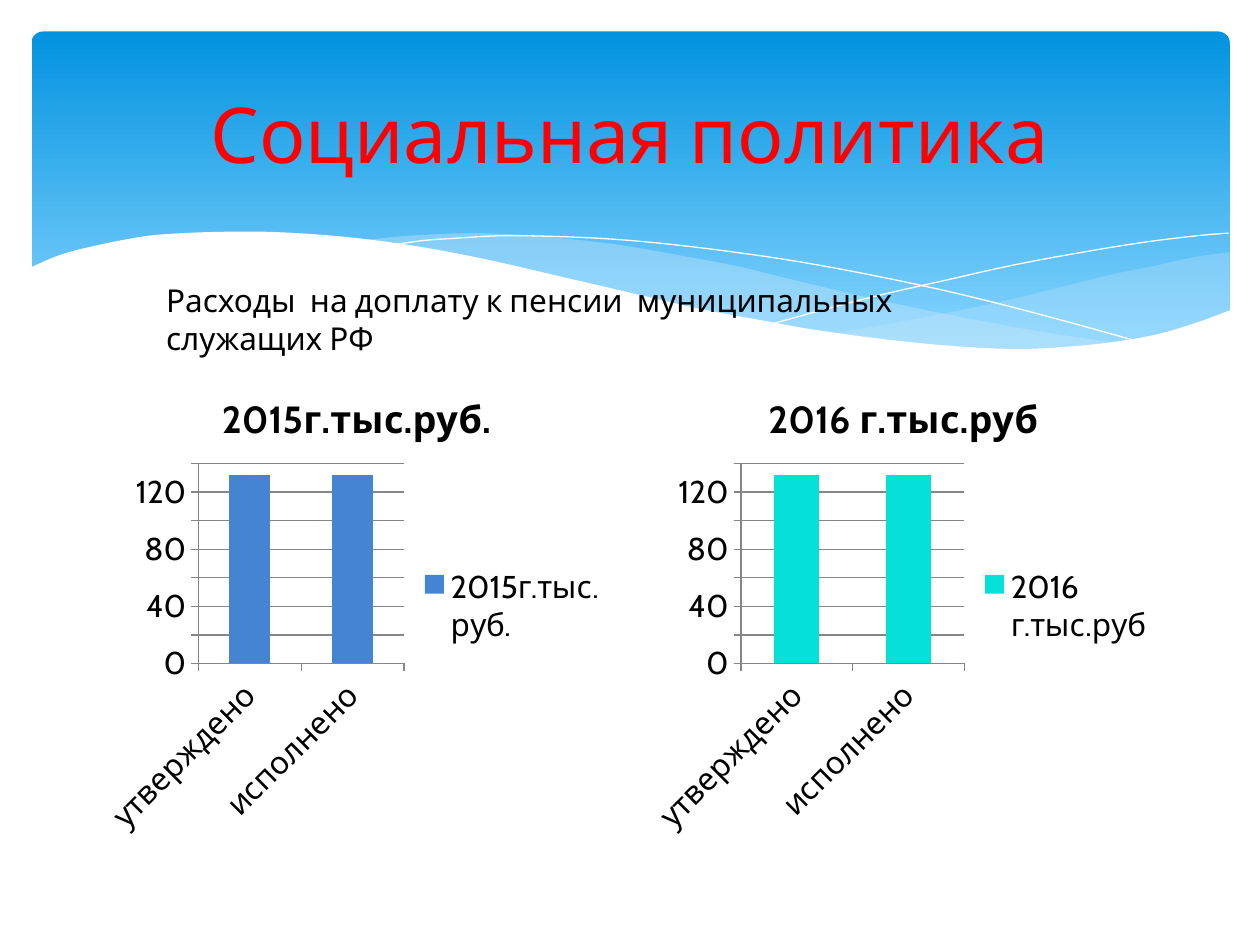
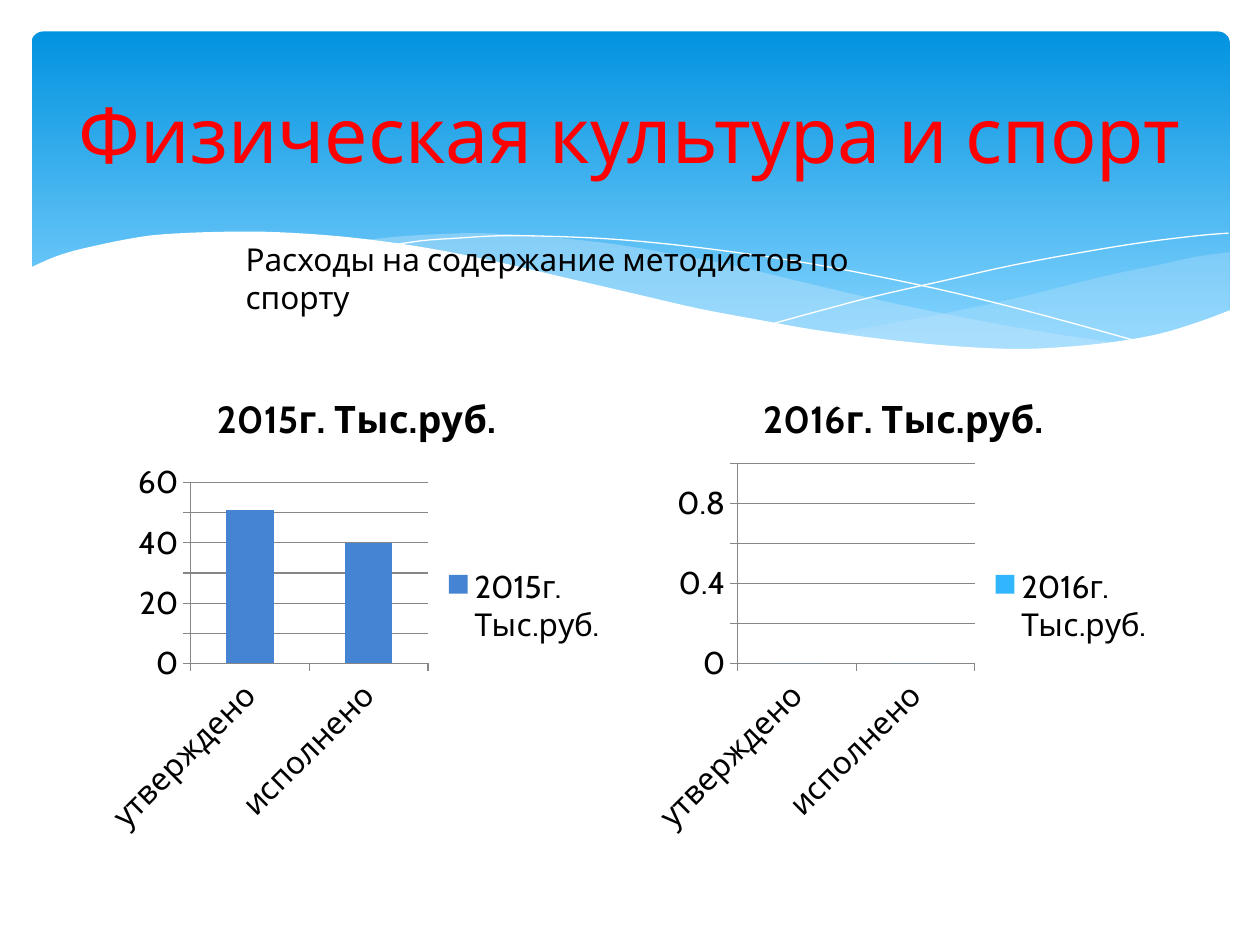
import dataclasses
import typing

import lxml.etree
import pptx
import pptx.chart.data
import pptx.dml.color
import pptx.enum.chart
import pptx.enum.shapes
import pptx.enum.text
import pptx.oxml.ns
import pptx.util

Point = tuple[float, float]


# Theme: colours, type sizes and fonts
@dataclasses.dataclass(frozen=True)
class Theme:
    font: str = "Cabin"
    title_size: float = 44
    body_size: float = 18
    chart_title_size: float = 21.6
    title: str = "FF0000"
    text: str = "000000"
    paper: str = "FFFFFF"
    band_top: str = "0293E0"
    band_bottom: str = "83D3FE"
    wave: str = "C6E7FC"
    grid_line: str = "868686"
    blue: str = "4584D3"
    cyan: str = "05E0DB"
    sky: str = "31B6FD"


THEME = Theme()

# Grid: square cells, 100 columns by 75 rows
COLUMNS, ROWS = 100, 75
SLIDE_WIDTH = pptx.util.Inches(10)
SLIDE_HEIGHT = pptx.util.Inches(7.5)


class Area(typing.NamedTuple):
    column: float
    row: float
    columns: float
    rows: float

    def lengths(self) -> list[int]:
        return [across(self.column), down(self.row), across(self.columns), down(self.rows)]


@dataclasses.dataclass(frozen=True)
class Wave:
    """Smooth stretches joined by straight sides; a fill closes the outline."""
    stretches: list[list[Point]]
    fill: str | None = None
    opacity: int = 100


@dataclasses.dataclass(frozen=True)
class BudgetChart:
    name: str
    values: tuple[int, int]
    color: str


@dataclasses.dataclass(frozen=True)
class BudgetPage:
    title: str
    caption: str
    caption_area: Area
    charts: tuple[BudgetChart, BudgetChart]


BAND_AREA = Area(2.5, 2.5, 95.1, 27)
TITLE_AREA = Area(5, 3.7, 90, 13.7)
CHART_AREA = Area(7.4, 29.3, 41.8, 37.7)
CHART_STEP = 43.4
CATEGORIES = ("утверждено", "исполнено")

WAVES = [
    # Pale wave at the right
    Wave([[(97.6, 20), (94.8, 20.4), (92.1, 21), (89.1, 21.6), (86.1, 22.3), (80.5, 23.7),
           (75.3, 24.8), (70.6, 25.7), (66.1, 26.5)],
          [(66.1, 26.5), (70.5, 27.1), (74.5, 27.5), (78.1, 27.7), (81.4, 27.8), (84.4, 27.7),
           (87.2, 27.4), (89.7, 27), (92.1, 26.5), (94.2, 25.9), (97.6, 24.7)]],
         THEME.wave, 29),
    # Pale wave across the middle
    Wave([[(89.3, 27.3), (83.7, 26.5), (77.5, 25.4), (70.6, 24), (62.9, 22.2), (58.4, 21.1),
           (54.1, 20.3), (50.2, 19.6), (46.5, 19.1), (42, 18.7), (38, 18.5), (34.4, 18.6),
           (31.3, 18.8), (28.6, 19.1)],
          [(28.6, 19.1), (32.3, 19.6), (36.2, 20.3), (40.4, 21.1), (44.9, 22.2), (49.1, 23.2),
           (53, 24), (58.4, 25.2), (63.4, 26.1), (68, 26.8), (72.2, 27.4), (76.1, 27.7),
           (79.6, 27.8), (82.8, 27.8), (85.7, 27.7), (89.3, 27.3)]],
         THEME.wave, 40),
    # Thin falling and rising lines
    Wave([[(30.9, 19.5), (33.5, 19.1), (36.3, 18.9), (40.1, 18.7), (45, 18.8), (48.9, 19),
           (53.3, 19.4), (58.2, 20), (63.6, 20.8), (69.5, 21.9), (76, 23.3), (83.1, 25.1),
           (90.7, 27.2)]]),
    Wave([[(61.3, 25.7), (65.3, 24.6), (69.5, 23.5), (74.8, 22.3), (80.6, 21), (86.6, 19.9),
           (91, 19.2), (95.1, 18.7), (97.5, 18.5)]]),
    # White sheet that cuts the band
    Wave([[(97.7, 24.6), (95, 25.6), (92, 26.5), (88.7, 27.1), (85, 27.5), (80.9, 27.7),
           (76.1, 27.5), (70.8, 27), (64.8, 26.2), (60.3, 25.4), (55.5, 24.5), (50.3, 23.3),
           (44.7, 22), (39.1, 20.7), (34, 19.7), (29.2, 19), (25, 18.6), (21.1, 18.4),
           (17.7, 18.4), (14.6, 18.5), (11.9, 18.7), (9.5, 19.1), (7.6, 19.5), (5.9, 19.9),
           (4.6, 20.3), (3.6, 20.7), (2.3, 21.3)],
          [(2.3, 32.9), (97.7, 32.9)]],
         THEME.paper),
]

PAGES = [
    BudgetPage(
        "Социальная политика",
        "Расходы  на доплату к пенсии  муниципальных служащих РФ",
        Area(12.2, 21.8, 68.5, 4),
        (BudgetChart("2015г.тыс.руб.", (132, 132), THEME.blue),
         BudgetChart("2016 г.тыс.руб", (132, 132), THEME.cyan)),
    ),
    BudgetPage(
        "Физическая культура и спорт",
        "Расходы на содержание методистов по спорту",
        Area(18.5, 18.6, 53.8, 4),
        (BudgetChart("2015г. Тыс.руб.", (51, 40), THEME.blue),
         BudgetChart("2016г. Тыс.руб.", (0, 0), THEME.sky)),
    ),
]


def across(columns: float) -> int:
    return round(SLIDE_WIDTH * columns / COLUMNS)


def down(rows: float) -> int:
    return round(SLIDE_HEIGHT * rows / ROWS)


def rgb(color: str) -> pptx.dml.color.RGBColor:
    return pptx.dml.color.RGBColor.from_string(color)


def style_font(font, size: float, color: str, bold: bool = False) -> None:
    font.name = THEME.font
    font.size = pptx.util.Pt(size)
    font.bold = bold
    font.color.rgb = rgb(color)


def smooth_curve(knots: list[Point], steps: int = 4) -> list[Point]:
    """Pass a Catmull-Rom curve through the knots."""
    if len(knots) < 3:
        return knots
    padded = [knots[0], *knots, knots[-1]]
    curve = [knots[0]]
    for before, start, end, after in zip(padded, padded[1:], padded[2:], padded[3:]):
        for step in range(1, steps + 1):
            t = step / steps
            curve.append(tuple(
                (2 * b + (c - a) * t + (2 * a - 5 * b + 4 * c - d) * t ** 2
                 + (3 * b - a - 3 * c + d) * t ** 3) / 2
                for a, b, c, d in zip(before, start, end, after)))
    return curve


def draw_band(page) -> None:
    band = page.shapes.add_shape(
        pptx.enum.shapes.MSO_SHAPE.ROUNDED_RECTANGLE, *BAND_AREA.lengths())
    band.adjustments[0] = 0.034
    band.shadow.inherit = False
    band.line.fill.background()
    band.fill.gradient()
    band.fill.gradient_angle = 270
    stops = ((0, THEME.band_top), (0.9, THEME.band_bottom))
    for stop, (position, color) in zip(band.fill.gradient_stops, stops):
        stop.position = position
        stop.color.rgb = rgb(color)


def draw_wave(page, wave: Wave) -> None:
    points = [(across(x), down(y)) for knots in wave.stretches for x, y in smooth_curve(knots)]
    builder = page.shapes.build_freeform(*points[0])
    builder.add_line_segments(points[1:], close=wave.fill is not None)
    shape = builder.convert_to_shape()
    shape.shadow.inherit = False
    if wave.fill is None:
        shape.fill.background()
        shape.line.color.rgb = rgb(THEME.paper)
        shape.line.width = pptx.util.Pt(0)
        return
    shape.line.fill.background()
    shape.fill.solid()
    shape.fill.fore_color.rgb = rgb(wave.fill)
    if wave.opacity < 100:
        color = shape.fill._xPr.find(".//" + pptx.oxml.ns.qn("a:srgbClr"))
        lxml.etree.SubElement(color, pptx.oxml.ns.qn("a:alpha"), val=str(wave.opacity * 1000))


def draw_text(page, text: str, area: Area, size: float, color: str,
              align=pptx.enum.text.PP_ALIGN.LEFT,
              anchor=pptx.enum.text.MSO_ANCHOR.TOP) -> None:
    box = page.shapes.add_textbox(*area.lengths())
    box.text_frame.word_wrap = True
    box.text_frame.vertical_anchor = anchor
    para = box.text_frame.paragraphs[0]
    para.text = text
    para.alignment = align
    style_font(para.font, size, color)


def draw_chart(page, budget: BudgetChart, area: Area) -> None:
    data = pptx.chart.data.CategoryChartData()
    data.categories = CATEGORIES
    data.add_series(budget.name, budget.values)
    chart = page.shapes.add_chart(
        pptx.enum.chart.XL_CHART_TYPE.COLUMN_STACKED, *area.lengths(), data).chart
    style_font(chart.font, THEME.body_size, THEME.text)

    # Title and legend
    chart.has_title = True
    chart.chart_title.include_in_layout = False
    para = chart.chart_title.text_frame.paragraphs[0]
    para.text = budget.name
    style_font(para.font, THEME.chart_title_size, THEME.text, bold=True)
    chart.has_legend = True
    chart.legend.position = pptx.enum.chart.XL_LEGEND_POSITION.RIGHT
    chart.legend.include_in_layout = False

    # Columns
    plot = chart.plots[0]
    plot.gap_width = 150
    plot.overlap = 100
    plot.vary_by_categories = False
    fill = plot.series[0].format.fill
    fill.solid()
    fill.fore_color.rgb = rgb(budget.color)

    # Axes and grid lines
    chart.value_axis.has_major_gridlines = True
    for axis in (chart.category_axis, chart.value_axis):
        axis.major_tick_mark = pptx.enum.chart.XL_TICK_MARK.OUTSIDE
        axis.minor_tick_mark = pptx.enum.chart.XL_TICK_MARK.NONE
    for part in (chart.category_axis, chart.value_axis, chart.value_axis.major_gridlines):
        part.format.line.color.rgb = rgb(THEME.grid_line)
        part.format.line.width = pptx.util.Pt(0.75)


def draw_page(deck, content: BudgetPage) -> None:
    page = deck.slides.add_slide(deck.slide_layouts[6])
    draw_band(page)
    for wave in WAVES:
        draw_wave(page, wave)
    draw_text(page, content.title, TITLE_AREA, THEME.title_size, THEME.title,
              pptx.enum.text.PP_ALIGN.CENTER, pptx.enum.text.MSO_ANCHOR.MIDDLE)
    for index, budget in enumerate(content.charts):
        column = CHART_AREA.column + index * CHART_STEP
        draw_chart(page, budget, CHART_AREA._replace(column=column))
    draw_text(page, content.caption, content.caption_area, THEME.body_size, THEME.text)


def main() -> None:
    deck = pptx.Presentation()
    deck.slide_width = SLIDE_WIDTH
    deck.slide_height = SLIDE_HEIGHT
    for content in PAGES:
        draw_page(deck, content)
    deck.save("out.pptx")


if __name__ == "__main__":
    main()
